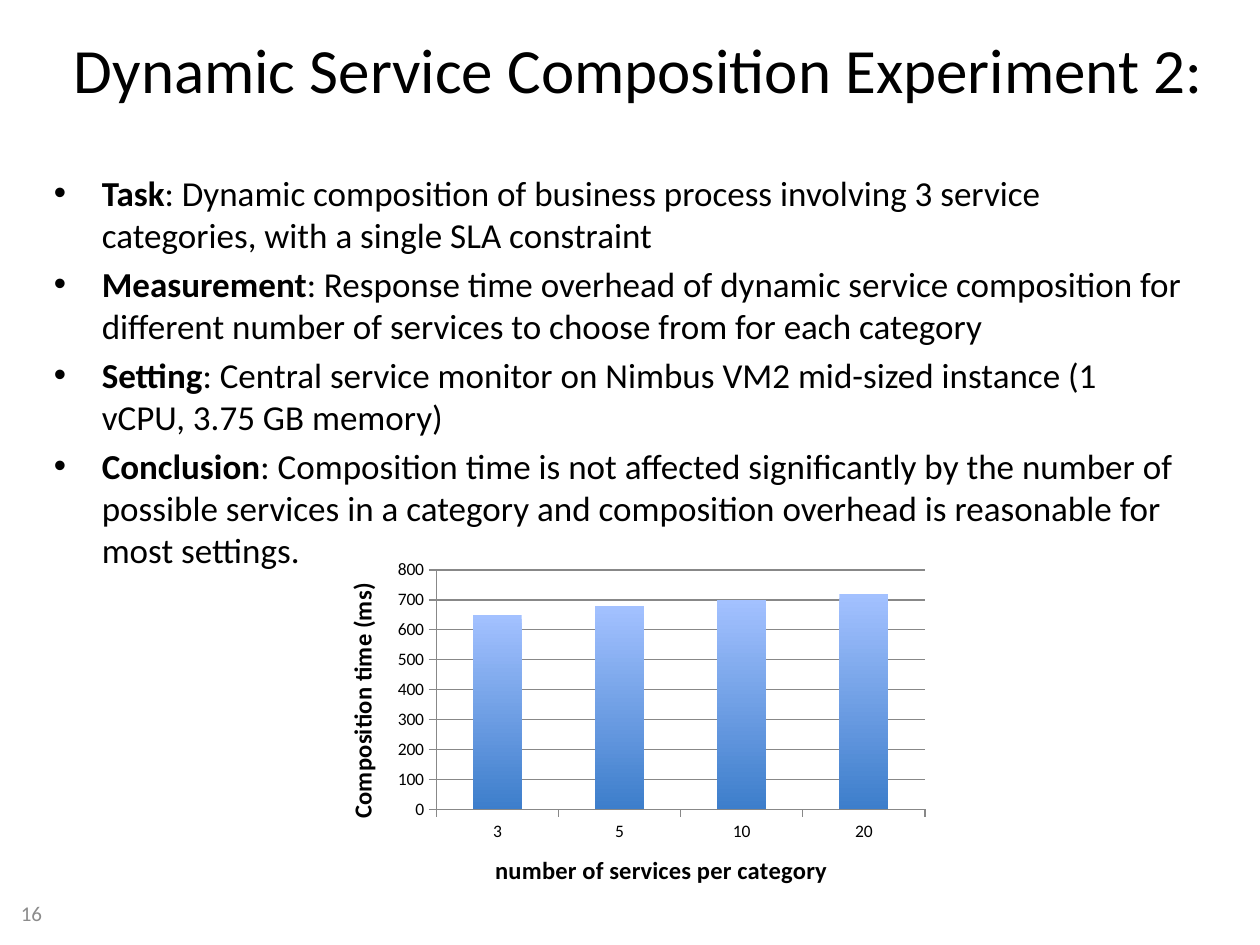
from lxml import etree
from pptx import Presentation
from pptx import util as u
from pptx.chart import data as chart_data
from pptx.dml import color
from pptx.enum import chart as ch
from pptx.enum import text
from pptx.oxml import parse_xml
from pptx.oxml import ns

BLACK, GREY, AXIS = "000000", "8C8C8C", "888888"


def style_font(font, size, hex_color=BLACK, bold=False):
    values = {"name": "Calibri", "size": u.Pt(size), "bold": bold}
    for name, value in values.items():
        setattr(font, name, value)
    font.color.rgb = color.RGBColor.from_string(hex_color)


def add_text_box(box, anchor, alignment, paragraphs, size, hex_color=BLACK):
    """Each paragraph is a list of (wording, bold) runs."""
    shape = slide.shapes.add_textbox(*[u.Inches(length) for length in box])
    frame = shape.text_frame
    frame.word_wrap = True
    frame.vertical_anchor = anchor
    for index, runs in enumerate(paragraphs):
        paragraph = frame.add_paragraph() if index else frame.paragraphs[0]
        paragraph.alignment = alignment
        for wording, bold in runs:
            run = paragraph.add_run()
            run.text = wording
            style_font(run.font, size, hex_color, bold)
    return frame


presentation = Presentation()
presentation.slide_width = u.Inches(10)
presentation.slide_height = u.Inches(7.5)
slide = presentation.slides.add_slide(presentation.slide_layouts[6])

# Title
middle, center = text.MSO_ANCHOR.MIDDLE, text.PP_ALIGN.CENTER
add_text_box((0.25, 0.08, 9.75, 0.92), middle, center,
             [[("Dynamic Service Composition Experiment 2: ", False)]], 36)

# Bulleted description of the experiment
points = {
    "Task": "Dynamic composition of business process involving 3 service "
            "categories, with a single SLA constraint",
    "Measurement": "Response time overhead of dynamic service composition for "
                   "different number of services to choose from for each category",
    "Setting": "Central service monitor on Nimbus VM2 mid-sized instance "
               "(1 vCPU, 3.75 GB memory)",
    "Conclusion": "Composition time is not affected significantly by the number of "
                  "possible services in a category and composition overhead is "
                  "reasonable for most settings.",
}
body = add_text_box((0.33, 1.31, 9.17, 2.92), text.MSO_ANCHOR.TOP, text.PP_ALIGN.LEFT,
                    [[(label, True), (": " + detail, False)]
                     for label, detail in points.items()], 20)
for paragraph in body.paragraphs:
    paragraph.space_before = u.Pt(4)
    properties = paragraph._p.get_or_add_pPr()
    properties.set("marL", str(u.Inches(0.38)))
    properties.set("indent", str(-u.Inches(0.38)))
    etree.SubElement(properties, ns.qn("a:buFont")).set("typeface", "Arial")
    etree.SubElement(properties, ns.qn("a:buChar")).set("char", "•")

# Column chart of composition time
data = chart_data.CategoryChartData()
data.categories = ["3", "5", "10", "20"]
data.add_series("Series 1", (650, 680, 700, 720))
chart_box = [u.Inches(length) for length in (2.53, 4.38, 4.91, 2.88)]
chart = slide.shapes.add_chart(ch.XL_CHART_TYPE.COLUMN_CLUSTERED, *chart_box, data).chart
chart.has_legend = False
chart.has_title = False
style_font(chart.font, 10)

plot = chart.plots[0]
plot.gap_width = 150
plot.vary_by_categories = False
fill = plot.series[0].format.fill
fill.gradient()
fill.gradient_angle = 270
for stop, hex_color, position in zip(fill.gradient_stops, ("A3C1FF", "3D7ECB"), (0, 1)):
    stop.color.rgb = color.RGBColor.from_string(hex_color)
    stop.position = position

# Axes and their titles
axis_titles = ((chart.category_axis, "number of services per category"),
               (chart.value_axis, "Composition time (ms)"))
for axis, wording in axis_titles:
    axis.major_tick_mark = ch.XL_TICK_MARK.OUTSIDE
    axis.format.line.color.rgb = color.RGBColor.from_string(AXIS)
    frame = axis.axis_title.text_frame
    frame.text = wording
    style_font(frame.paragraphs[0].runs[0].font, 14, bold=True)
scale = {"minimum_scale": 0, "maximum_scale": 800, "major_unit": 100,
         "has_major_gridlines": True}
for name, value in scale.items():
    setattr(chart.value_axis, name, value)
gridlines = chart.value_axis.major_gridlines.format.line
gridlines.color.rgb = color.RGBColor.from_string(AXIS)

# Fixed place of the plot inside the chart
plot_area = chart._chartSpace.chart.plotArea
for old_layout in plot_area.findall(ns.qn("c:layout")):
    plot_area.remove(old_layout)
settings = {"layoutTarget": "inner", "xMode": "edge", "yMode": "edge",
            "x": 0.19, "y": 0.05, "w": 0.79, "h": 0.66}
entries = "".join(f'<c:{name} val="{value}"/>' for name, value in settings.items())
plot_area.insert(0, parse_xml(
    f'<c:layout {ns.nsdecls("c")}><c:manualLayout>{entries}</c:manualLayout></c:layout>'))

# Slide number
add_text_box((0.03, 7.08, 0.44, 0.33), middle, center, [[("16", False)]], 12, GREY)

presentation.save("out.pptx")
